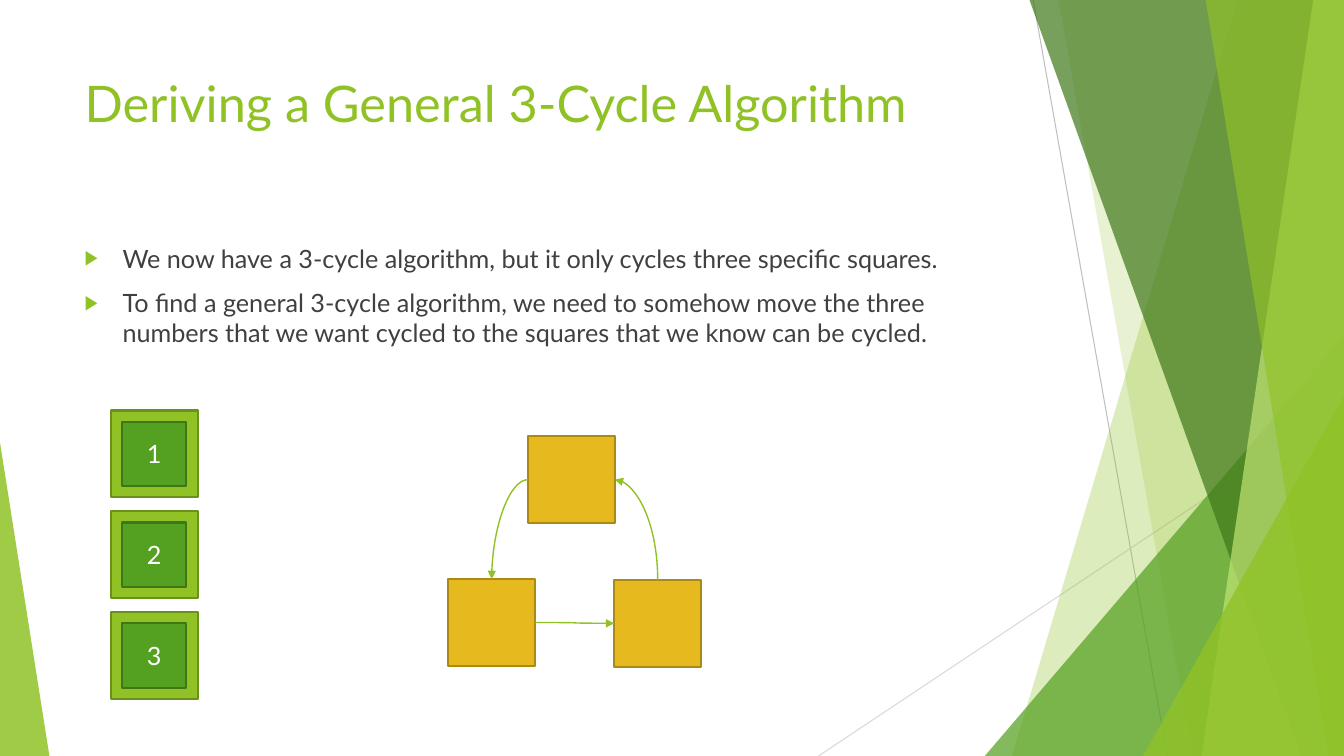
"""Build a slide on deriving a general 3-cycle algorithm."""
import pptx
import pptx.dml.color
import pptx.enum.shapes
import pptx.enum.text
import pptx.oxml
import pptx.oxml.ns
import pptx.util

Pt = pptx.util.Pt
RGBColor = pptx.dml.color.RGBColor
qn = pptx.oxml.ns.qn
SHAPE = pptx.enum.shapes.MSO_SHAPE
CONNECTOR = pptx.enum.shapes.MSO_CONNECTOR
ANCHOR = pptx.enum.text.MSO_ANCHOR
ALIGN = pptx.enum.text.PP_ALIGN

LIME = RGBColor(0x90, 0xC2, 0x26)
LIME_EDGE = RGBColor(0x6B, 0x90, 0x1C)
LIGHT_LIME = RGBColor(0xC0, 0xE4, 0x74)
GREEN = RGBColor(0x54, 0xA0, 0x21)
GREEN_EDGE = RGBColor(0x3E, 0x76, 0x18)
DARK_GREEN = RGBColor(0x3F, 0x78, 0x19)
GOLD = RGBColor(0xE6, 0xB9, 0x1E)
GOLD_EDGE = RGBColor(0xAA, 0x89, 0x16)
TEXT = RGBColor(0x40, 0x40, 0x40)
WHITE = RGBColor(0xFF, 0xFF, 0xFF)
GRAY = RGBColor(0xBF, 0xBF, 0xBF)
LIGHT_GRAY = RGBColor(0xD9, 0xD9, 0xD9)

WIDTH, HEIGHT = 960, 540
BAND_TOP = -0.72
TOP, LEFT, BOTTOM, RIGHT = range(4)


class SlideBuilder:
    def __init__(self, presentation, font):
        self.font = font
        self.slide = presentation.slides.add_slide(presentation.slide_layouts[1])
        self.shapes = self.slide.shapes

    def add_xml(self, parent, tag, **attributes):
        element = pptx.oxml.parse_xml(f"<a:{tag} {pptx.oxml.ns.nsdecls('a')}/>")
        for name, value in attributes.items():
            element.set(name, str(value))
        parent.append(element)
        return element

    def add_run(self, paragraph, text, size, color):
        run = paragraph.add_run()
        run.text = text
        run.font.name = self.font
        run.font.size = Pt(size)
        run.font.color.rgb = color

    def placeholder(self, shape, left, top, width, height):
        shape.element.getparent().append(shape.element)
        shape.left, shape.top = Pt(left), Pt(top)
        shape.width, shape.height = Pt(width), Pt(height)
        frame = shape.text_frame
        frame.word_wrap = True
        frame.auto_size = pptx.enum.text.MSO_AUTO_SIZE.NONE
        frame.vertical_anchor = ANCHOR.TOP
        return frame

    def title(self, text, *box):
        paragraph = self.placeholder(self.shapes.title, *box).paragraphs[0]
        paragraph.alignment = ALIGN.LEFT
        self.add_run(paragraph, text, 36, LIME)

    def bullets(self, items, *box):
        frame = self.placeholder(self.slide.placeholders[1], *box)
        for index, item in enumerate(items):
            paragraph = frame.add_paragraph() if index else frame.paragraphs[0]
            paragraph.space_before = Pt(10)
            properties = paragraph._p.get_or_add_pPr()
            properties.set("marL", str(Pt(27)))
            properties.set("indent", str(Pt(-27)))
            bullet_color = self.add_xml(properties, "buClr")
            self.add_xml(bullet_color, "srgbClr", val=LIME)
            self.add_xml(properties, "buSzPct", val=80000)
            self.add_xml(properties, "buFont", typeface="Arial")
            self.add_xml(properties, "buChar", char="▶")
            self.add_run(paragraph, item, 18, TEXT)

    def tint(self, shape, color, opacity):
        shape.shadow.inherit = False
        shape.fill.solid()
        shape.fill.fore_color.rgb = color
        shape.line.fill.background()
        fill_color = shape.element.spPr.find(".//" + qn("a:srgbClr"))
        self.add_xml(fill_color, "alpha", val=opacity * 1000)

    def band(self, top_x, bottom_x, color, opacity):
        outline = self.shapes.build_freeform(Pt(top_x), Pt(BAND_TOP))
        corners = [(WIDTH, BAND_TOP), (WIDTH, HEIGHT), (bottom_x, HEIGHT)]
        outline.add_line_segments([(Pt(x), Pt(y)) for x, y in corners], close=True)
        self.tint(outline.convert_to_shape(), color, opacity)

    def wedge(self, left, top, width, apex, color, opacity):
        shape = self.shapes.add_shape(SHAPE.ISOSCELES_TRIANGLE, Pt(left), Pt(top),
                                      Pt(width), Pt(HEIGHT - top))
        shape.adjustments[0] = apex
        self.tint(shape, color, opacity)

    def square(self, left, top, side, color, edge, label=None):
        shape = self.shapes.add_shape(SHAPE.RECTANGLE, Pt(left), Pt(top), Pt(side), Pt(side))
        shape.shadow.inherit = False
        shape.fill.solid()
        shape.fill.fore_color.rgb = color
        shape.line.color.rgb = edge
        shape.line.width = Pt(1.5)
        if label:
            shape.text_frame.vertical_anchor = ANCHOR.MIDDLE
            paragraph = shape.text_frame.paragraphs[0]
            paragraph.alignment = ALIGN.CENTER
            self.add_run(paragraph, label, 18, WHITE)
        return shape

    def style_line(self, connector, color, width, arrow_end=None):
        connector.line.color.rgb = color
        connector.line.width = Pt(width)
        if arrow_end:
            line = connector.element.spPr.find(qn("a:ln"))
            self.add_xml(line, arrow_end, type="triangle")
        self.add_xml(connector.element.spPr, "effectLst")

    def line(self, x1, y1, x2, y2, color):
        connector = self.shapes.add_connector(CONNECTOR.STRAIGHT, Pt(x1), Pt(y1), Pt(x2), Pt(y2))
        self.style_line(connector, color, 0.75)

    def curve(self, start, start_side, end, end_side, preset, arrow_end="tailEnd"):
        connector = self.shapes.add_connector(CONNECTOR.CURVE, 0, 0, 0, 0)
        connector.begin_connect(start, start_side)
        connector.end_connect(end, end_side)
        connector.element.spPr.find(qn("a:prstGeom")).set("prst", preset)
        self.style_line(connector, LIME, 1, arrow_end)


def main():
    presentation = pptx.Presentation()
    presentation.slide_width, presentation.slide_height = Pt(WIDTH), Pt(HEIGHT)
    builder = SlideBuilder(presentation, "Lato")

    builder.line(738, 0, 833.76, HEIGHT, GRAY)
    builder.line(WIDTH, 290.16, 584.64, HEIGHT, LIGHT_GRAY)
    builder.band(884.16, 722.88, LIME, 30)
    builder.band(756, 851.76, LIME, 20)
    builder.wedge(703.44, 239.76, 256.56, 1, GREEN, 72)
    builder.band(735.12, 929.52, DARK_GREEN, 70)
    builder.band(938.16, 858.24, LIGHT_LIME, 70)
    builder.band(861.12, 948.96, LIME, 65)
    builder.wedge(816.48, 282.96, 143.52, 1, LIME, 80)
    builder.wedge(0, 316.08, 35.28, 0, LIME, 85)

    builder.title("Deriving a General 3-Cycle Algorithm", 53.28, 48.24, 676.8, 103.68)
    builder.bullets([
        "We now have a 3-cycle algorithm, but it only cycles three specific squares.",
        "To find a general 3-cycle algorithm, we need to somehow move the three numbers "
        "that we want cycled to the squares that we know can be cycled.",
    ], 53.28, 169.92, 676.8, 305.28)

    side, tile_side = 62, 46
    margin = (side - tile_side) / 2
    for index, label in enumerate("123"):
        left, top = 79.2, 293.2 + 72 * index
        builder.square(left, top, side, LIME, LIME_EDGE)
        builder.square(left + margin, top + margin, tile_side, GREEN, GREEN_EDGE, label)

    top_square = builder.square(377.2, 311.6, side, GOLD, GOLD_EDGE)
    right_square = builder.square(438.8, 414.2, side, GOLD, GOLD_EDGE)
    left_square = builder.square(320.2, 413.6, side, GOLD, GOLD_EDGE)
    builder.curve(top_square, LEFT, left_square, TOP, "curvedConnector2")
    builder.curve(left_square, RIGHT, right_square, LEFT, "curvedConnector3")
    builder.curve(top_square, RIGHT, right_square, TOP, "curvedConnector2", "headEnd")

    presentation.save("out.pptx")


if __name__ == "__main__":
    main()
